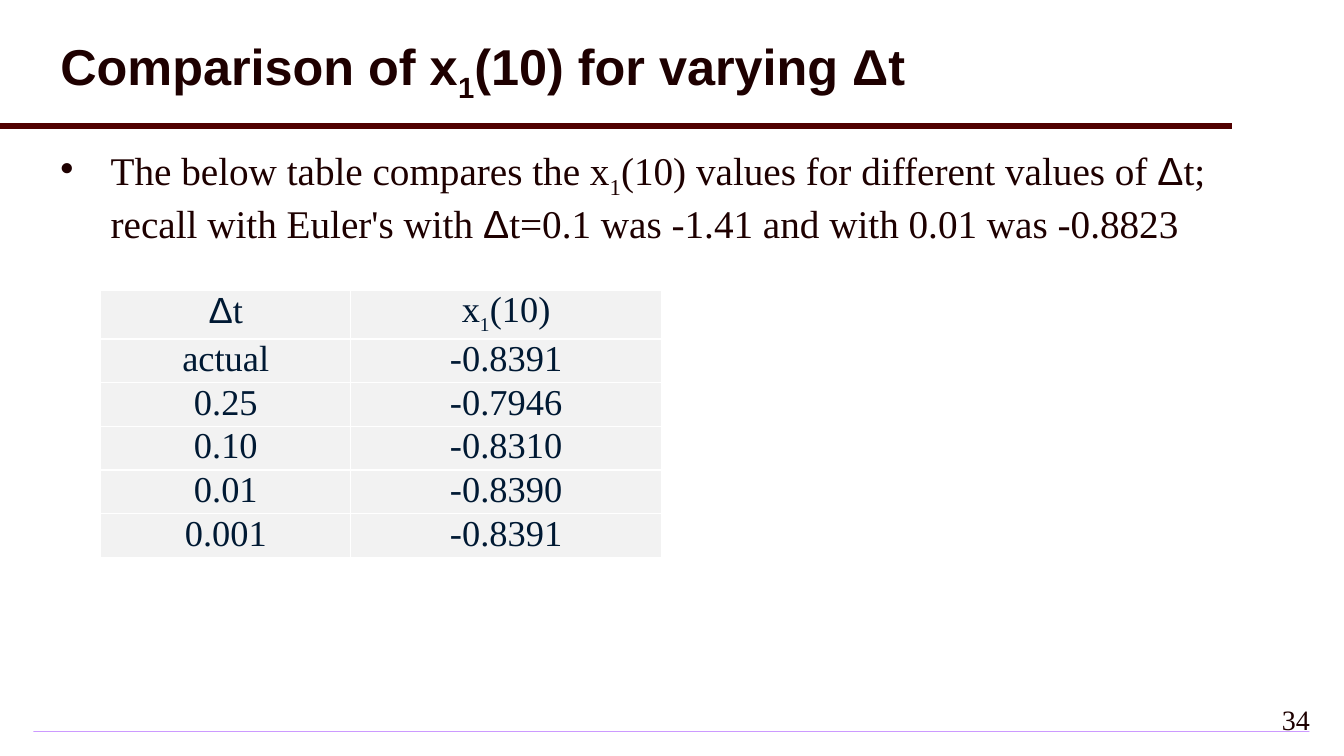
from dataclasses import dataclass

from lxml import etree
from pptx import Presentation, util as u
from pptx.dml.color import RGBColor
from pptx.enum import shapes, text
from pptx.oxml import ns


@dataclass(frozen=True)
class Theme:
    ink: RGBColor = RGBColor(0x1E, 0x00, 0x00)
    rule: RGBColor = RGBColor(0x50, 0x00, 0x00)
    table_ink: RGBColor = RGBColor(0x00, 0x19, 0x33)
    cell: RGBColor = RGBColor(0xF2, 0xF2, 0xF2)
    border: str = "FFFFFF"
    footer: tuple = (RGBColor(0xCC, 0x99, 0xFF), RGBColor(0xF3, 0xEB, 0xFF))
    sans: str = "Arial"
    serif: str = "Times New Roman"
    title_size: int = 36
    body_size: int = 28
    table_size: int = 26
    table_sub_size: int = 24
    number_size: int = 20


THEME = Theme()


@dataclass(frozen=True)
class Style:
    size: int
    color: RGBColor = THEME.ink
    font: str = THEME.serif
    bold: bool = False


@dataclass(frozen=True)
class Span:
    text: str
    font: str | None = None
    subscript: bool = False
    size: int | None = None


@dataclass(frozen=True)
class Area:
    left: float
    top: float
    width: float
    height: float

    def lengths(self) -> list:
        return [u.Inches(v) for v in (self.left, self.top, self.width, self.height)]


TITLE = Style(THEME.title_size, font=THEME.sans, bold=True)
BODY = Style(THEME.body_size)
TABLE = Style(THEME.table_size, THEME.table_ink)
NUMBER = Style(THEME.number_size)

DELTA = Span("Δ", THEME.sans)
SUB_ONE = Span("1", subscript=True)
TITLE_SPANS = [Span("Comparison of x"), SUB_ONE, Span("(10) for varying Δt")]
BODY_SPANS = [
    Span("The below table compares the x"), SUB_ONE,
    Span("(10) values for different values of "), DELTA,
    Span("t; recall with Euler's with "), DELTA,
    Span("t=0.1 was -1.41 and with 0.01 was -0.8823"),
]
HEADER = [
    [DELTA, Span("t")],
    [Span("x"), Span("1", subscript=True, size=THEME.table_sub_size), Span("(10)")],
]
RESULTS = [
    ("actual", "-0.8391"),
    ("0.25", "-0.7946"),
    ("0.10", "-0.8310"),
    ("0.01", "-0.8390"),
    ("0.001", "-0.8391"),
]
COLUMN_WIDTHS = [2.48, 3.08]
HEADER_HEIGHT, ROW_HEIGHT = 0.44, 0.4


def write(para, spans: list[Span], style: Style, align=text.PP_ALIGN.LEFT) -> None:
    para.alignment = align
    for span in spans:
        run = para.add_run()
        run.text = span.text
        run.font.name = span.font or style.font
        run.font.size = u.Pt(span.size or style.size)
        run.font.bold = style.bold
        run.font.color.rgb = style.color
        if span.subscript:
            run.font._element.set("baseline", "-25000")


def add_text(page, area: Area, spans: list[Span], style: Style,
             align=text.PP_ALIGN.LEFT, anchor=text.MSO_ANCHOR.TOP):
    """Add a wrapping text box and return its only paragraph."""
    frame = page.shapes.add_textbox(*area.lengths()).text_frame
    frame.word_wrap = True
    frame.vertical_anchor = anchor
    para = frame.paragraphs[0]
    write(para, spans, style, align)
    return para


def add_bullet(para, indent: float) -> None:
    props = para._p.get_or_add_pPr()
    props.set("marL", str(u.Inches(indent)))
    props.set("indent", str(-u.Inches(indent)))
    color = etree.SubElement(props, ns.qn("a:buClr"))
    etree.SubElement(color, ns.qn("a:srgbClr"), val=str(THEME.ink))
    etree.SubElement(props, ns.qn("a:buChar"), char="•")


def add_footer_rule(page) -> None:
    bar = page.shapes.add_shape(shapes.MSO_SHAPE.RECTANGLE,
                                *Area(0.33, 7.25, 12.66, 0.01).lengths())
    bar.shadow.inherit = False
    bar.line.fill.background()
    bar.fill.gradient()
    for stop, color in zip(bar.fill.gradient_stops, THEME.footer):
        stop.color.rgb = color
    gradient = bar._element.spPr.find(ns.qn("a:gradFill"))
    gradient.remove(gradient.find(ns.qn("a:lin")))
    outward = etree.SubElement(gradient, ns.qn("a:path"), {"path": "shape"})
    etree.SubElement(outward, ns.qn("a:fillToRect"), dict.fromkeys("ltrb", "50000"))


def add_title_rule(page) -> None:
    rule = page.shapes.add_connector(shapes.MSO_CONNECTOR.STRAIGHT, u.Inches(0),
                                     u.Inches(1.25), u.Inches(12.22), u.Inches(1.25))
    rule.line.color.rgb = THEME.rule
    rule.line.width = u.Pt(4)
    etree.SubElement(rule._element.spPr, ns.qn("a:effectLst"))


def fill_cell(cell, spans: list[Span]) -> None:
    cell.margin_left = cell.margin_right = u.Inches(0.07)
    cell.margin_top = cell.margin_bottom = u.Inches(0)
    cell.fill.solid()
    cell.fill.fore_color.rgb = THEME.cell
    write(cell.text_frame.paragraphs[0], spans, TABLE, text.PP_ALIGN.CENTER)
    props = cell._tc.get_or_add_tcPr()
    for place, side in enumerate("LRTB"):
        border = etree.Element(ns.qn(f"a:ln{side}"), w=str(u.Pt(1)))
        solid = etree.SubElement(border, ns.qn("a:solidFill"))
        etree.SubElement(solid, ns.qn("a:srgbClr"), val=THEME.border)
        props.insert(place, border)


def add_results(page) -> None:
    rows = [HEADER] + [[[Span(value)] for value in row] for row in RESULTS]
    height = HEADER_HEIGHT + ROW_HEIGHT * len(RESULTS)
    area = Area(1, 2.88, sum(COLUMN_WIDTHS), height)
    table = page.shapes.add_table(len(rows), len(COLUMN_WIDTHS), *area.lengths()).table
    table.first_row = table.horz_banding = False
    for column, width in zip(table.columns, COLUMN_WIDTHS):
        column.width = u.Inches(width)
    for r, row in enumerate(rows):
        table.rows[r].height = u.Inches(ROW_HEIGHT if r else HEADER_HEIGHT)
        for c, spans in enumerate(row):
            fill_cell(table.cell(r, c), spans)


def main() -> None:
    deck = Presentation()
    deck.slide_width, deck.slide_height = u.Inches(13.33), u.Inches(7.5)
    page = deck.slides.add_slide(deck.slide_layouts[6])
    add_footer_rule(page)
    add_title_rule(page)
    title = add_text(page, Area(0.5, 0.08, 12.22, 1.17), TITLE_SPANS, TITLE,
                     anchor=text.MSO_ANCHOR.MIDDLE)
    title.line_spacing = 0.9
    body = add_text(page, Area(0.5, 1.4, 12.36, 1.3), BODY_SPANS, BODY)
    add_bullet(body, 0.5)
    add_results(page)
    add_text(page, Area(12.42, 6.92, 0.67, 0.5), [Span("34")], NUMBER,
             text.PP_ALIGN.RIGHT)
    deck.save("out.pptx")


if __name__ == "__main__":
    main()
